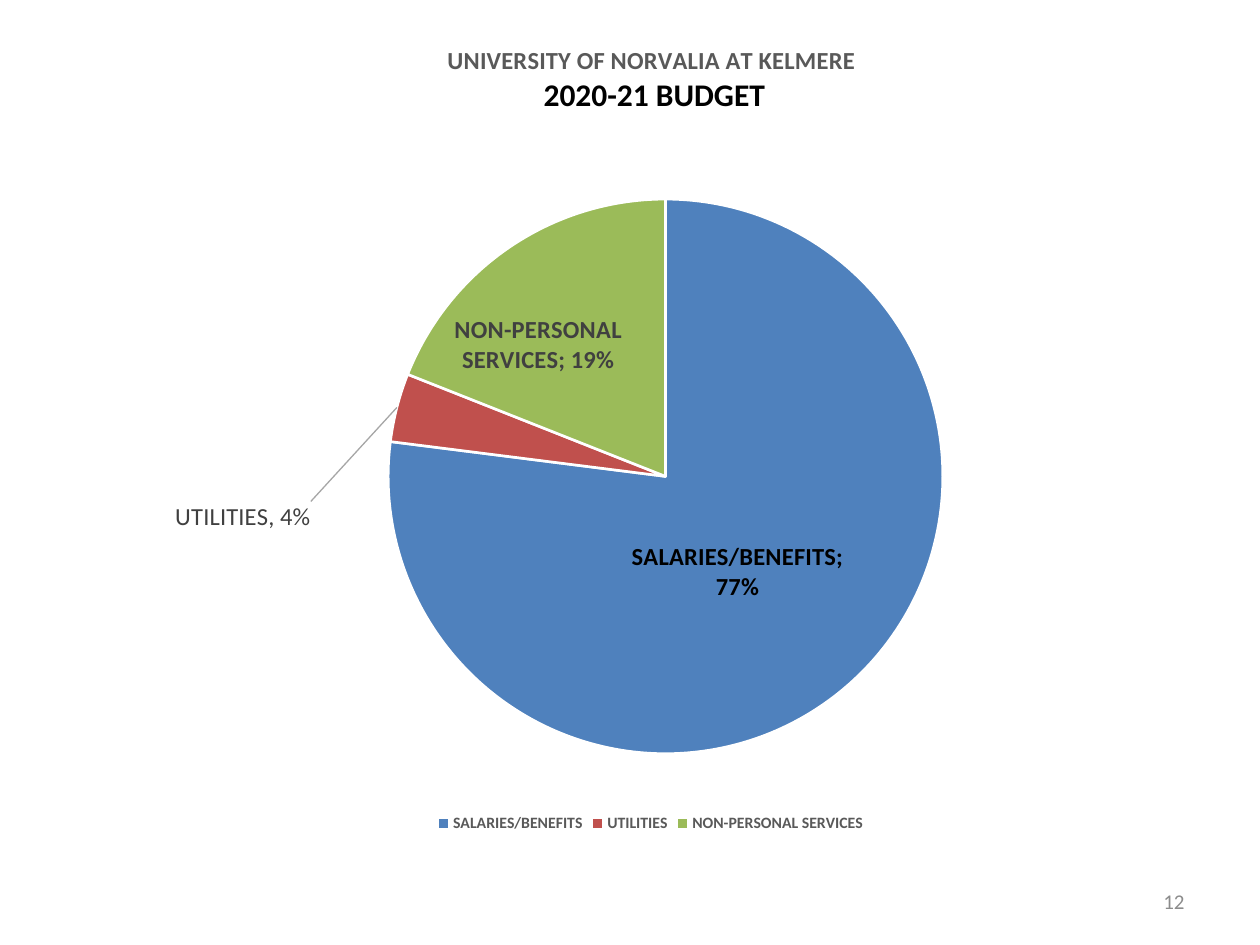
from pptx import Presentation
from pptx.util import Inches, Pt
from pptx.dml.color import RGBColor
from pptx.chart.data import CategoryChartData as Data
from pptx.enum.chart import XL_CHART_TYPE as Kind, XL_LEGEND_POSITION as Side
from pptx.enum.chart import XL_LABEL_POSITION as Spot
from pptx.enum.text import PP_ALIGN as Align, MSO_ANCHOR as Anchor
from pptx.oxml import parse_xml
from pptx.oxml.ns import nsdecls, qn


def style(font, size, color, bold=False):
    font.name = "Calibri"
    font.size = Pt(size)
    font.bold = bold
    font.color.rgb = RGBColor.from_string(color)


def layout(**vals):
    tags = "".join(f'<c:{k} val="{v}"/>' for k, v in vals.items())
    return parse_xml(f'<c:layout {nsdecls("c")}><c:manualLayout>{tags}</c:manualLayout></c:layout>')


prs = Presentation()
prs.slide_width, prs.slide_height = Inches(10), Inches(7.5)
slide = prs.slides.add_slide(prs.slide_layouts[6])

box = slide.shapes.add_textbox(Inches(7.17), Inches(6.95), Inches(2.33), Inches(0.4))
frame = box.text_frame
frame.word_wrap = True
frame.vertical_anchor = Anchor.MIDDLE
para = frame.paragraphs[0]
para.alignment = Align.RIGHT
run = para.add_run()
run.text = "12"
style(run.font, 12, "8C8C8C")

data = Data(number_format="0%")
data.categories = ["SALARIES/BENEFITS", "UTILITIES", "NON-PERSONAL SERVICES"]
data.add_series("Series 1", [0.77, 0.04, 0.19])
chart = slide.shapes.add_chart(
    Kind.PIE, Inches(1.25), Inches(-0.02), Inches(7.83), Inches(6.67), data).chart
style(chart.font, 10, "000000")

chart.has_title = True
title = chart.chart_title
title.include_in_layout = False
frame = title.text_frame
lines = [("UNIVERSITY OF NORVALIA AT KELMERE ", 14, "595959"),
         ("2020-21 BUDGET", 18, "000000")]
for i, (text, size, color) in enumerate(lines):
    para = frame.add_paragraph() if i else frame.paragraphs[0]
    para.alignment = Align.CENTER
    run = para.add_run()
    run.text = text
    style(run.font, size, color, True)
for old in title._element.findall(qn("c:layout")):
    title._element.remove(old)
title._element.find(qn("c:tx")).addnext(layout(xMode="edge", yMode="edge", x=0.29, y=0.05))

chart.has_legend = True
chart.legend.position = Side.BOTTOM
chart.legend.include_in_layout = False
style(chart.legend.font, 9, "595959", True)

plot = chart.plots[0]
plot.vary_by_categories = True
area = chart._chartSpace.chart.plotArea
for old in area.findall(qn("c:layout")):
    area.remove(old)
area.insert(0, layout(layoutTarget="inner", xMode="edge", yMode="edge",
                      x=0.23, y=0.24, w=0.57, h=0.66))

pie = plot.series[0]
tags = pie.data_labels
tags.show_value = tags.show_category_name = True
tags.number_format = "0%"
tags.number_format_is_linked = False
tags.position = Spot.BEST_FIT
style(tags.font, 14, "404040", True)

slices = [("4F81BD", "000000", Spot.CENTER, -0.02, -0.01),
          ("C0504D", "404040", Spot.OUTSIDE_END, -0.08, 0.15),
          ("9BBB59", "404040", Spot.CENTER, -0.05, -0.02)]
for i, (fill, ink, spot, x, y) in enumerate(slices):
    point = pie.points[i]
    point.format.fill.solid()
    point.format.fill.fore_color.rgb = RGBColor.from_string(fill)
    point.format.line.color.rgb = RGBColor.from_string("FFFFFF")
    point.format.line.width = Pt(1.5)
    label = point.data_label
    if i == 1:
        run = label.text_frame.paragraphs[0].add_run()
        run.text = "UTILITIES, 4%"
        style(run.font, 14, ink)
    else:
        style(label.font, 14, ink, True)
    label.position = spot
    node = tags._element.findall(qn("c:dLbl"))[i]
    node.find(qn("c:idx")).addnext(layout(x=x, y=y))
    node.find(qn("c:showCatName")).set("val", "1")
    node.find(qn("c:showPercent")).set("val", "0")
    node.append(parse_xml(f'<c:separator {nsdecls("c")}>; </c:separator>'))
    if i == 0:
        node.append(parse_xml(
            f'<c:extLst {nsdecls("c")}><c:ext uri="{{CE6537A1-D6FC-4f65-9D91-7224C49458BB}}" '
            'xmlns:c15="http://schemas.microsoft.com/office/drawing/2012/chart">'
            '<c15:layout><c:manualLayout><c:w val="0.18"/><c:h val="0.1"/>'
            '</c:manualLayout></c15:layout></c:ext></c:extLst>'))

for old in tags._element.findall(qn("c:showLeaderLines")):
    tags._element.remove(old)
tags._element.append(parse_xml(f'<c:showLeaderLines {nsdecls("c")} val="1"/>'))
tags._element.append(parse_xml(
    f'<c:leaderLines {nsdecls("c", "a")}><c:spPr><a:ln w="9525"><a:solidFill>'
    '<a:srgbClr val="A6A6A6"/></a:solidFill></a:ln></c:spPr></c:leaderLines>'))

prs.save("out.pptx")
